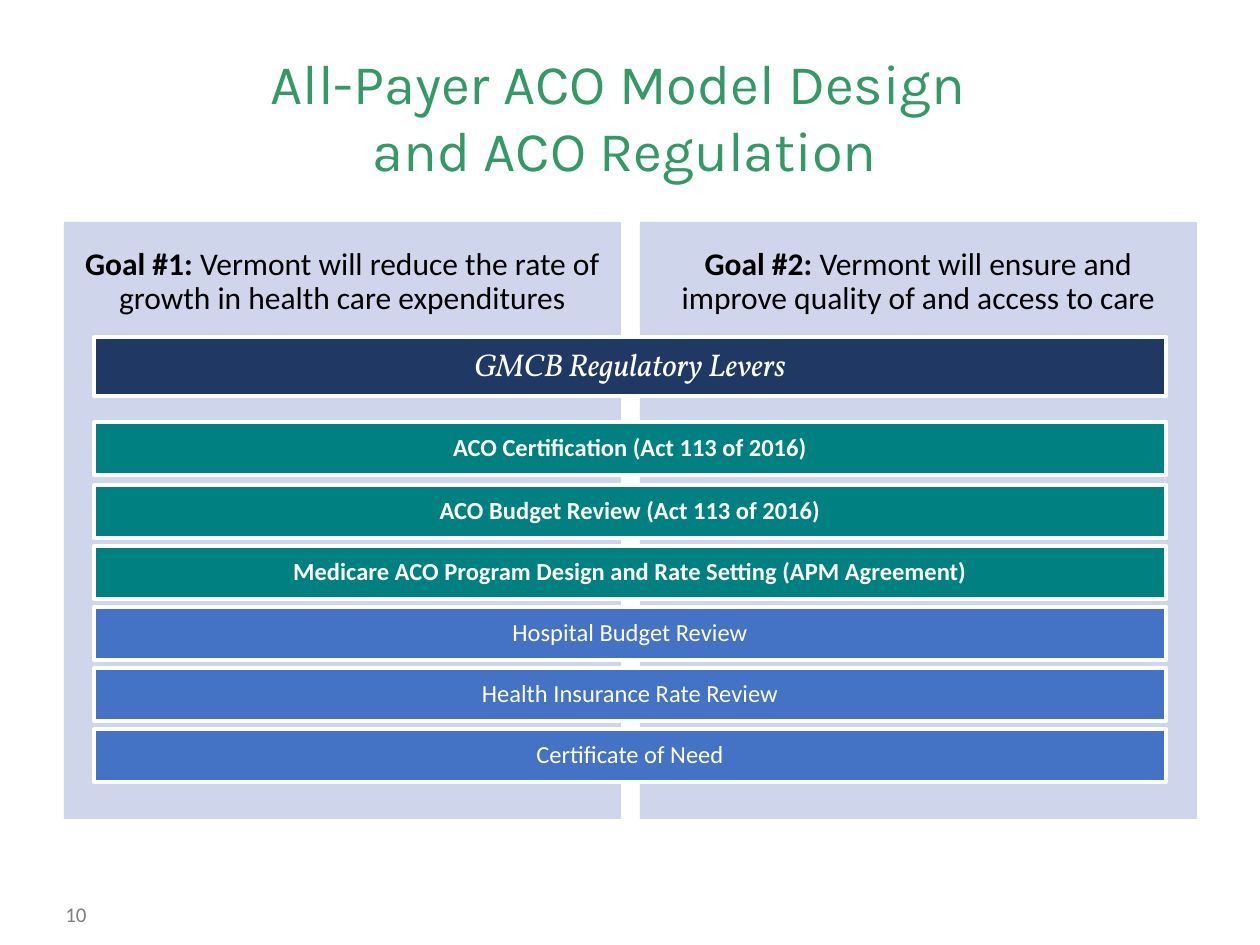
from pptx import Presentation, util as u
from pptx.dml.color import RGBColor
from pptx.enum import shapes, text

PX = u.Inches(1) // 126
CENTER = text.PP_ALIGN.CENTER
TOP, MIDDLE = text.MSO_ANCHOR.TOP, text.MSO_ANCHOR.MIDDLE

deck = Presentation()
deck.slide_width, deck.slide_height = 1260 * PX, 945 * PX
page = deck.slides.add_slide(deck.slide_layouts[6])


def add_box(left, top, width, height, fill=None, line=None):
    """Add a filled rectangle, or a plain text box when no fill is given."""
    place = [side * PX for side in (left, top, width, height)]
    if not fill:
        return page.shapes.add_textbox(*place)
    box = page.shapes.add_shape(shapes.MSO_SHAPE.RECTANGLE, *place)
    box.shadow.inherit = False
    box.fill.solid()
    box.fill.fore_color.rgb = RGBColor.from_string(fill)
    if line:
        box.line.color.rgb = RGBColor.from_string(line)
        box.line.width = u.Pt(2)
    else:
        box.line.fill.background()
    return box


def write(box, spans, size, color, font="Calibri", align=CENTER, anchor=MIDDLE,
          spacing=0.9, insets=None):
    """Fill one paragraph with spans, each a pair of words and font settings."""
    frame = box.text_frame
    frame.word_wrap = True
    frame.vertical_anchor = anchor
    for side, inset in (insets or {}).items():
        setattr(frame, f"margin_{side}", inset * PX)
    para = frame.paragraphs[0]
    para.alignment, para.line_spacing = align, spacing
    for words, style in spans:
        for number, part in enumerate(words.split("\n")):
            if number:
                para.add_line_break()
            span = para.add_run()
            span.text = part
            values = {"name": font, "size": u.Pt(size), "bold": False, **style}
            for name, value in values.items():
                setattr(span.font, name, value)
            span.font.color.rgb = RGBColor.from_string(color)


page_number = add_box(53, 895, 294, 50)
write(page_number, [("10", {})], 12, "808080", align=text.PP_ALIGN.LEFT,
      anchor=TOP, spacing=1.0)

title = add_box(53, 37, 1144, 157)
write(title, [("All-Payer ACO Model Design \nand ACO Regulation", {})], 32, "339966",
      font="Karla", spacing=1.0)

goals = [
    ("Goal #1: ", "Vermont will reduce the rate of growth in health care expenditures"),
    ("Goal #2: ", "Vermont will ensure and improve quality of and access to care"),
]
for column, (label, goal) in enumerate(goals):
    panel = add_box(64 + 576 * column, 222, 557, 597, "CFD5EA")
    write(panel, [(label, {"bold": True}), (goal, {})], 18, "000000", anchor=TOP,
          insets={"left": 9, "top": 26, "right": 9, "bottom": 425})

BAR_INSETS = {"left": 6, "top": 5, "right": 6, "bottom": 5}
header = add_box(94, 337, 1072, 59, "203864", "FFFFFF")
write(header, [("GMCB Regulatory Levers", {"italic": True})], 18, "FFFFFF",
      font="Vollkorn", insets=BAR_INSETS)

TEAL, BLUE = "008080", "4472C4"
levers = [
    (422, TEAL, "ACO Certification (Act 113 of 2016)"),
    (485, TEAL, "ACO Budget Review (Act 113 of 2016)"),
    (546, TEAL, "Medicare ACO Program Design and Rate Setting (APM Agreement)"),
    (607, BLUE, "Hospital Budget Review"),
    (668, BLUE, "Health Insurance Rate Review"),
    (729, BLUE, "Certificate of Need"),
]
for top, fill, lever in levers:
    bar = add_box(94, top, 1072, 53, fill, "FFFFFF")
    write(bar, [(lever, {"bold": fill == TEAL})], 14, "FFFFFF", insets=BAR_INSETS)

deck.save("out.pptx")
